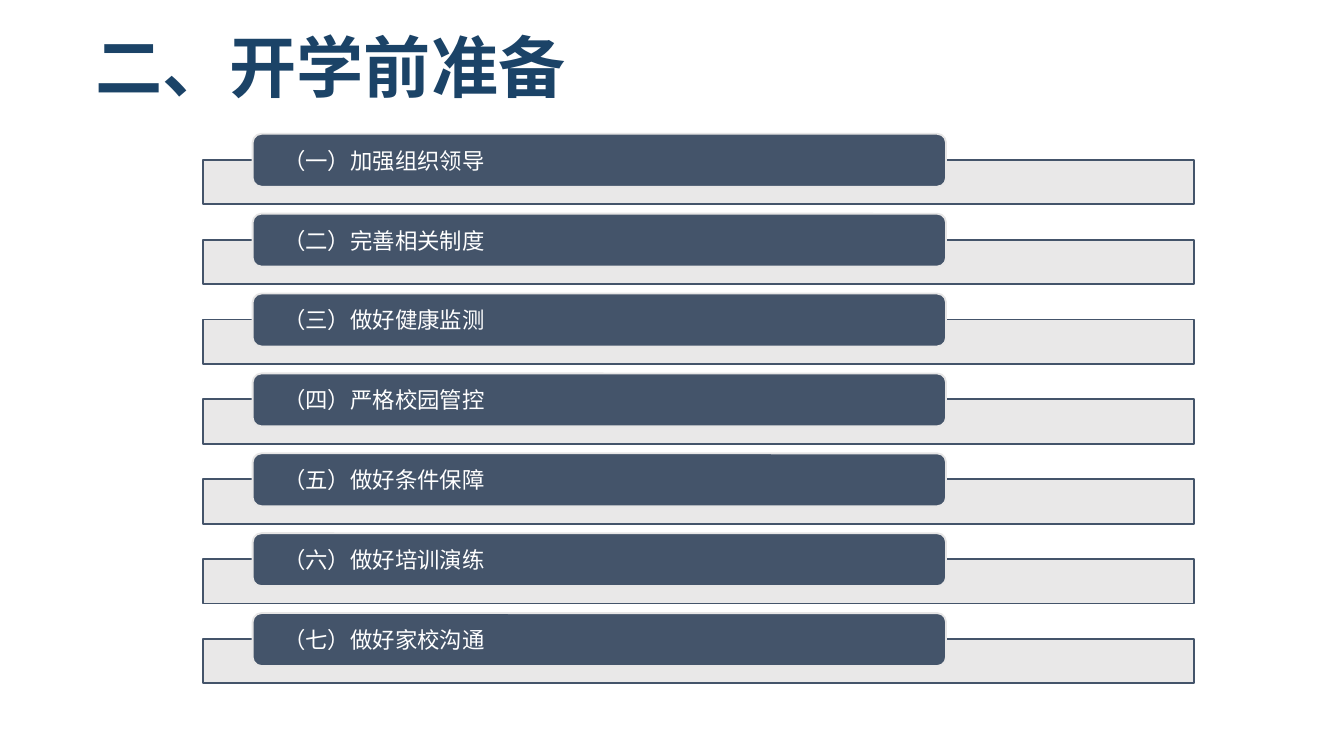
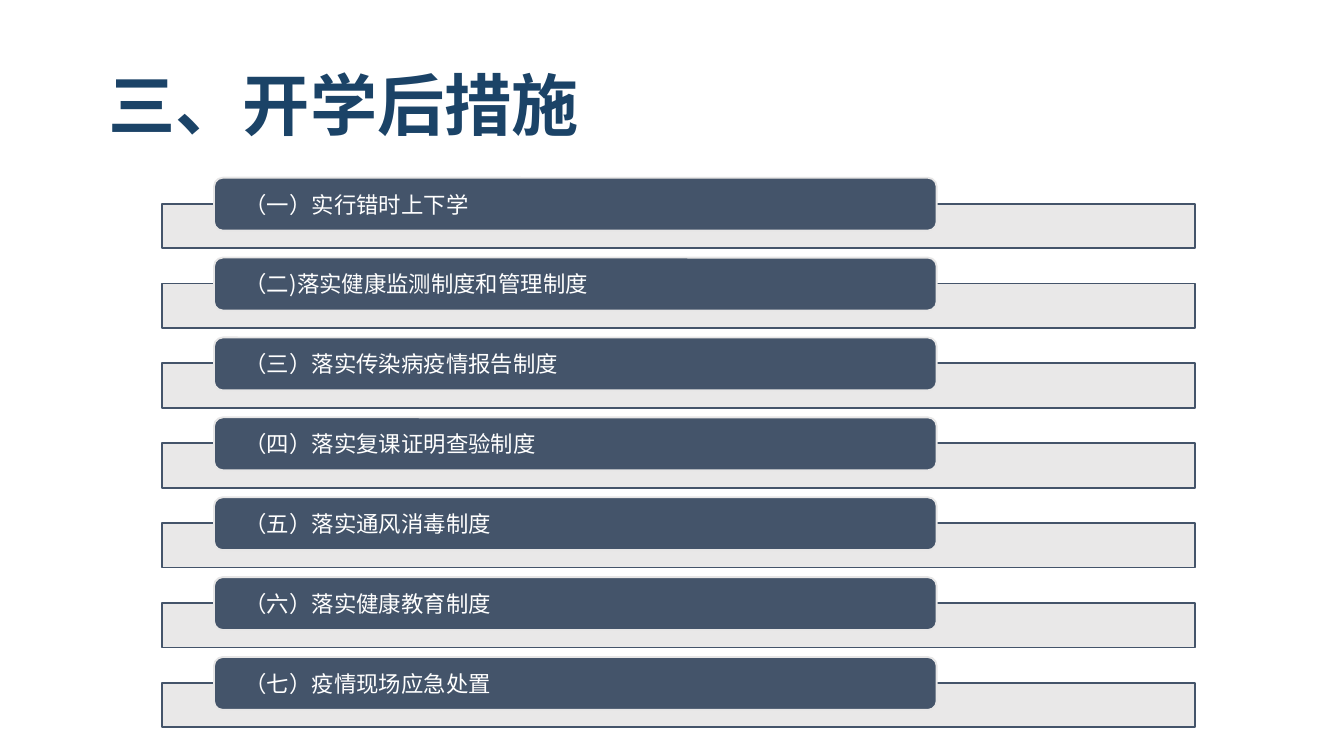
from lxml.etree import SubElement
from pptx import Presentation
from pptx.dml.color import RGBColor
from pptx.enum.shapes import MSO_SHAPE
from pptx.enum.text import MSO_ANCHOR, PP_ALIGN
from pptx.oxml.ns import qn
from pptx.util import Cm, Pt

FONT = "Noto Sans CJK SC"
COLORS = {"title": "1B4367", "slate": "44546A", "pale": "E7E6E6", "white": "FFFFFF"}
PITCH = 1.51

PREPARE = [
    "（一）加强组织领导",
    "（二）完善相关制度",
    "（三）做好健康监测",
    "（四）严格校园管控",
    "（五）做好条件保障",
    "（六）做好培训演练",
    "（七）做好家校沟通",
]
MEASURES = [
    "（一）实行错时上下学",
    "（二)落实健康监测制度和管理制度",
    "（三）落实传染病疫情报告制度",
    "（四）落实复课证明查验制度",
    "（五）落实通风消毒制度",
    "（六）落实健康教育制度",
    "（七）疫情现场应急处置",
]


def rgb(name):
    return RGBColor.from_string(COLORS[name])


def write(frame, text, size, color, bold=False):
    """Fill the first paragraph, with the font set for Latin and Chinese."""
    frame.word_wrap = True
    para = frame.paragraphs[0]
    para.text = text
    para.alignment = PP_ALIGN.LEFT
    font = para.font
    font.size, font.bold = Pt(size), bold
    font.color.rgb = rgb(color)
    font.name = FONT
    props = para._p.pPr.find(qn("a:defRPr"))
    SubElement(props, qn("a:ea")).set("typeface", FONT)
    return para


def add_title(slide, text, left, top):
    box = slide.shapes.add_textbox(Cm(left), Cm(top), Cm(20.78), Cm(1.85))
    write(box.text_frame, text, 36, "title", bold=True).line_spacing = 0.9


def add_box(slide, kind, left, top, width, height, fill, line):
    box = slide.shapes.add_shape(kind, Cm(left), Cm(top), Cm(width), Cm(height))
    box.shadow.inherit = False
    box.fill.solid()
    box.fill.fore_color.rgb = rgb(fill)
    box.line.color.rgb = rgb(line)
    box.line.width = Pt(1)
    return box


def add_rail(slide, left, top, width):
    rail = add_box(slide, MSO_SHAPE.RECTANGLE, left, top, width, 0.84, "pale", "slate")
    color = rail._element.spPr.find(qn("a:solidFill"))[0]
    SubElement(color, qn("a:alpha")).set("val", "90000")


def add_label(slide, text, left, top, width):
    label = add_box(slide, MSO_SHAPE.ROUNDED_RECTANGLE, left, top, width, 1,
                    "slate", "pale")
    frame = label.text_frame
    frame.margin_left = frame.margin_right = Cm(0.53)
    frame.margin_top = frame.margin_bottom = 0
    frame.vertical_anchor = MSO_ANCHOR.MIDDLE
    write(frame, text, 12, "white")


def add_list(slide, items, left, top, width):
    """Each label starts 5% along its rail and covers 70% of it."""
    for row, text in enumerate(items):
        y = top + row * PITCH
        add_rail(slide, left, y + 0.49, width)
        add_label(slide, text, left + 0.05 * width, y, 0.7 * width)


def main():
    deck = Presentation()
    deck.slide_width, deck.slide_height = Cm(25.4), Cm(14.29)
    blank = deck.slide_layouts[6]

    slide = deck.slides.add_slide(blank)
    add_title(slide, "二、开学前准备", 1.55, 0.53)
    add_list(slide, PREPARE, 3.84, 2.53, 18.72)

    slide = deck.slides.add_slide(blank)
    add_title(slide, "三、开学后措施", 1.8, 1.24)
    add_list(slide, MEASURES, 3.07, 3.36, 19.51)

    deck.save("out.pptx")


if __name__ == "__main__":
    main()
